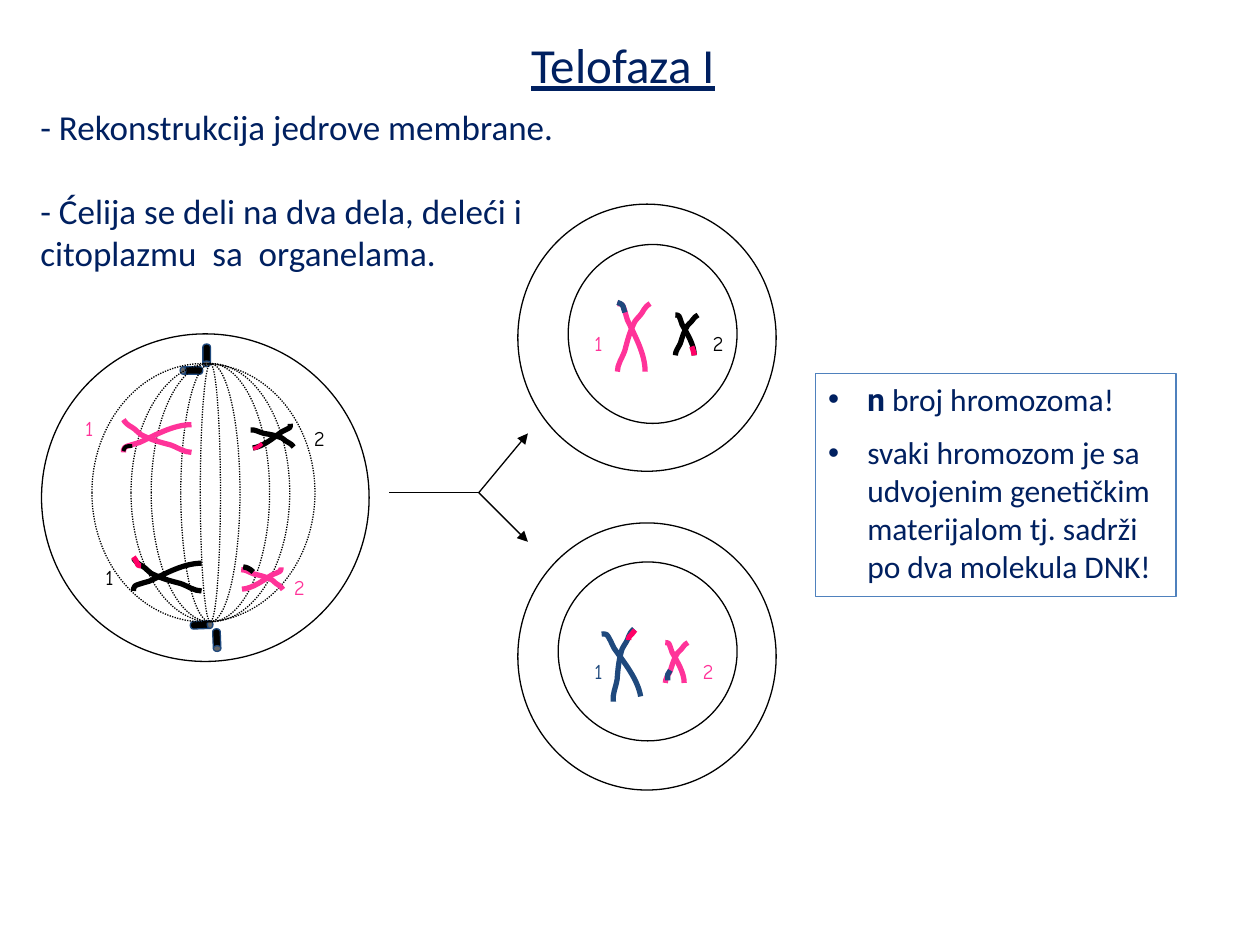
import dataclasses
import typing

import lxml.etree
import pptx
import pptx.dml.color
import pptx.enum.dml
import pptx.enum.shapes
import pptx.enum.text
import pptx.oxml.ns
import pptx.util

Pt = pptx.util.Pt
qn = pptx.oxml.ns.qn
SHAPE = pptx.enum.shapes.MSO_SHAPE
ALIGN = pptx.enum.text.PP_ALIGN
AUTO_SIZE = pptx.enum.text.MSO_AUTO_SIZE
Point = tuple[float, float]

WIDTH, HEIGHT = pptx.util.Inches(10), pptx.util.Inches(7.5)
COLUMNS = 100  # square cells: 100 columns by 75 rows
CELL = WIDTH / COLUMNS

COLORS = {"ink": "000000", "text": "002060", "frame": "4F81BD",
          "blue": "1F497D", "pink": "FF3399", "red": "FF0066"}

# Cubic curves in shares of the chromatid's box: a start, then three points a piece.
LEFT_ARM = [(0, 0), (0.05, 0), (0.14, 0), (0.18, 0.02), (0.23, 0.04), (0.32, 0.19),
            (0.36, 0.24), (0.64, 0.48), (1, 0.74), (1, 1)]
RIGHT_ARM = [(1, 0), (0.8, 0.06), (0.8, 0.12), (0.7, 0.17), (0.65, 0.2), (0.58, 0.23),
             (0.54, 0.26), (0.38, 0.41), (0.31, 0.54), (0.23, 0.69), (0.15, 0.8),
             (0, 0.89), (0, 1)]


@dataclasses.dataclass
class Chromosome:
    left: Point  # corner of the left arm, before turning
    right: Point
    large: bool
    color: str
    turn: float
    label: str
    label_at: Point
    tip: list[Point]  # exchanged segment
    tip_color: str
    tip_width: float = 3


CHROMOSOMES = [
    Chromosome((11.4, 32.1), (11.2, 31.9), True, "pink", 270, "1", (5.6, 32.5),
               [(9.8, 35.8), (9.9, 35.4), (10, 35.4), (10.5, 35.4)], "ink", 2.25),
    Chromosome((12.2, 43.1), (12, 42.9), True, "ink", 270, "1", (7.2, 44.3),
               [(10.6, 44.2), (11.1, 44.9), (10.8, 44.9), (11.2, 44.9)], "red"),
    Chromosome((20.8, 33), (20.7, 33.2), False, "ink", 82.3, "2", (23.85, 33.3),
               [(20.1, 35.6), (20.3, 35.6), (20.6, 35.4), (20.8, 35.2)], "red", 2.25),
    Chromosome((20, 44.3), (19.9, 44.4), False, "pink", 86, "2", (22.25, 45.1),
               [(19.3, 45), (19.6, 45), (19.9, 45.2), (20.1, 45.4)], "ink"),
    Chromosome((49, 24.1), (49, 24.1), True, "pink", 0, "1", (46, 25.75),
               [(49, 24), (49.6, 24.2), (49.4, 24.3), (49.6, 24.8)], "blue"),
    Chromosome((53.6, 25), (53.6, 25), False, "ink", 0, "2", (55.5, 25.75),
               [(54.9, 27.5), (55, 27.7), (55.1, 28.2), (55.1, 28.2)], "red"),
    Chromosome((48.2, 50.1), (48.2, 50.1), True, "blue", 350.1, "1", (46, 51.75),
               [(50.4, 50), (49.9, 50.7), (49.9, 50.4), (49.9, 50.8)], "red"),
    Chromosome((52.8, 51), (52.8, 51), False, "pink", 0, "2", (54.7, 51.75),
               [(53.2, 53.2), (52.9, 53.7), (53, 53.4), (53, 54)], "blue"),
]

CELLS = [(3.3, 26.5, 26, 26), (41.1, 16.2, 20.5, 21.2), (41.1, 41.5, 20.5, 21.2)]
NUCLEI = [(45.1, 19.4, 13.4, 14.2), (44.3, 44.6, 14.2, 14.2)]
SPINDLE = [(16.7, 1.6), (16.7, 4.7), (16.7, 9.4), (16.7, 12.6), (16.15, 17.7)]  # centre, width
CENTRIOLES = [(14.9, 28.5, 270), (16.1, 27.3, 180), (16.9, 49.9, 177.6), (15.7, 48.7, 87.6)]


def rgb(name: str) -> pptx.dml.color.RGBColor:
    return pptx.dml.color.RGBColor.from_string(COLORS[name])


def cells(*values: float) -> list[int]:
    return [round(v * CELL) for v in values]


def outline(sp: typing.Any, color: str, width: float = 0.75) -> None:
    sp.shadow.inherit = False
    sp.line.color.rgb = rgb(color)
    sp.line.width = Pt(width)


def preset(s: typing.Any, kind: typing.Any, box: tuple, color: str = "ink") -> typing.Any:
    sp = s.shapes.add_shape(kind, *cells(*box))
    sp.fill.background()
    outline(sp, color)
    return sp


def add_run(p: typing.Any, text: str, size: float, color: str = "text",
            font: str = "Calibri") -> typing.Any:
    r = p.add_run()
    r.text = text
    r.font.size, r.font.name = Pt(size), font
    r.font.color.rgb = rgb(color)
    return r


def curve(s: typing.Any, points: list[Point], color: str, width: float,
          turn: float = 0) -> None:
    """Draw joined cubic curves, given in cells, as one open outline."""
    spots = [cells(*point) for point in points]
    builder = s.shapes.build_freeform(*spots[0])
    builder.add_line_segments(spots[1:], close=False)
    sp = builder.convert_to_shape()
    segments = list(sp._element.iter(qn("a:lnTo")))
    for i in range(0, len(segments), 3):
        first, *others = segments[i:i + 3]
        first.tag = qn("a:cubicBezTo")
        for other in others:
            first.append(other[0])
            other.getparent().remove(other)
    sp.fill.background()
    outline(sp, color, width)
    sp.rotation = turn


def draw_chromosome(s: typing.Any, c: Chromosome) -> None:
    widths, height = ((2.2, 2.6), 5.4) if c.large else ((1.5, 1.8), 3.2)
    for arm, (x, y), width in zip((LEFT_ARM, RIGHT_ARM), (c.left, c.right), widths):
        curve(s, [(x + px * width, y + py * height) for px, py in arm], c.color, 3, c.turn)
    curve(s, c.tip, c.tip_color, c.tip_width)
    tf = s.shapes.add_textbox(*cells(*c.label_at, 3, 3)).text_frame
    tf.word_wrap = False
    p = tf.paragraphs[0]
    p.alignment = ALIGN.CENTER
    add_run(p, c.label, 12, c.color, "Comic Neue")


def connect(s: typing.Any, start: Point, end: Point, arrow: bool) -> None:
    line = s.shapes.add_connector(pptx.enum.shapes.MSO_CONNECTOR.STRAIGHT,
                                  *cells(*start, *end))
    line.line.color.rgb = rgb("ink")
    line.line.width = Pt(0.75)
    if arrow:
        lxml.etree.SubElement(line.line._get_or_add_ln(), qn("a:tailEnd"), type="triangle")
    lxml.etree.SubElement(line._element.spPr, qn("a:effectLst"))


def add_bullet(p: typing.Any) -> None:
    p.alignment = ALIGN.LEFT
    p.space_before = Pt(9)
    indent = cells(3.1)[0]
    pPr = p._p.get_or_add_pPr()
    pPr.set("marL", str(indent))
    pPr.set("indent", str(-indent))
    lxml.etree.SubElement(pPr, qn("a:buFont"), typeface="Arial")
    lxml.etree.SubElement(pPr, qn("a:buChar"), char="•")


def draw_texts(s: typing.Any) -> None:
    title = s.shapes.title
    title.left, title.top, title.width, title.height = cells(2.2, 10.1, 43.4, 16.6)
    tf = title.text_frame
    tf.word_wrap, tf.auto_size = True, AUTO_SIZE.NONE
    tf.vertical_anchor = pptx.enum.text.MSO_ANCHOR.BOTTOM
    tf.margin_top, tf.margin_bottom = cells(0, 4.95)
    first, second = tf.paragraphs[0], tf.add_paragraph()
    first.alignment = second.alignment = ALIGN.LEFT
    second.space_before = Pt(24)
    add_run(first, "- Rekonstrukcija jedrove membrane.", 20)
    add_run(second, "- Ćelija se deli na dva dela, deleći i  citoplazmu  sa  organelama.", 20)

    tf = s.shapes.add_textbox(*cells(41.2, 2.25, 25, 10.4)).text_frame
    tf.word_wrap = True
    add_run(tf.paragraphs[0], "Telofaza I", 28).font.underline = True

    tf = preset(s, SHAPE.RECTANGLE, (64.75, 29.65, 28.6, 17.7), "frame").text_frame
    tf.word_wrap, tf.vertical_anchor = True, pptx.enum.text.MSO_ANCHOR.TOP
    first, second = tf.paragraphs[0], tf.add_paragraph()
    for p in (first, second):
        add_bullet(p)
    add_run(first, "n", 18, font="Roboto").font.bold = True
    add_run(first, " broj hromozoma!", 18)
    add_run(second, "svaki hromozom je sa udvojenim genetičkim materijalom tj. "
                    "sadrži po dva molekula DNK!", 18)


def main() -> None:
    prs = pptx.Presentation()
    prs.slide_width, prs.slide_height = WIDTH, HEIGHT
    s = prs.slides.add_slide(prs.slide_layouts[5])
    for box in CELLS + NUCLEI:
        preset(s, SHAPE.OVAL, box)
    for x, y, turn in CENTRIOLES:
        sp = preset(s, SHAPE.CAN, (x, y, 0.6, 1.8), "blue")
        sp.adjustments[0] = 0.76
        sp.rotation = turn
        sp.fill.solid()
        sp.fill.fore_color.rgb = rgb("ink")
    for centre, width in SPINDLE:
        sp = preset(s, SHAPE.OVAL, (centre - width / 2, 28.85, width, 20.5))
        sp.line.dash_style = pptx.enum.dml.MSO_LINE.ROUND_DOT
    fork = (38, 39.1)
    connect(s, (30.9, 39.1), fork, False)
    for end in ((41.9, 34.4), (41.9, 43)):
        connect(s, fork, end, True)
    for c in CHROMOSOMES:
        draw_chromosome(s, c)
    draw_texts(s)
    prs.save("out.pptx")


if __name__ == "__main__":
    main()
